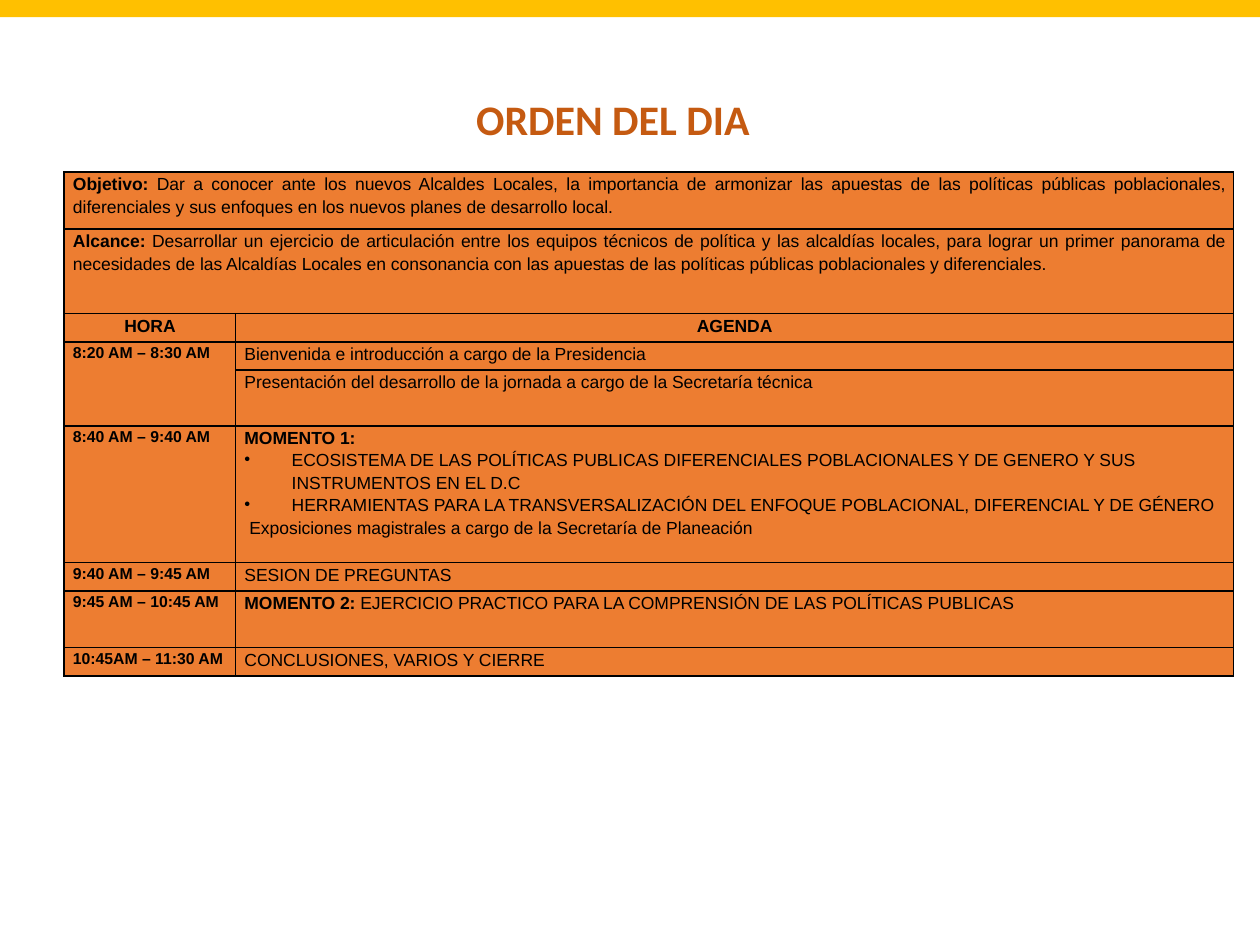
import pptx
import pptx.util
import pptx.dml.color
import pptx.enum.shapes
import pptx.enum.text
import pptx.oxml.ns
import lxml.etree

Pt = pptx.util.Pt
ALIGN = pptx.enum.text.PP_ALIGN
ANCHOR = pptx.enum.text.MSO_ANCHOR

TITLE = "ORDEN DEL DIA"
INTRO = [
    ("Objetivo: ", "Dar a conocer ante los nuevos Alcaldes Locales, la importancia de armonizar "
     "las apuestas de las políticas públicas poblacionales, diferenciales y sus enfoques en los "
     "nuevos planes de desarrollo local."),
    ("Alcance: ", "Desarrollar un ejercicio de articulación entre los equipos técnicos de política "
     "y las alcaldías locales, para lograr un primer panorama de necesidades de las Alcaldías "
     "Locales en consonancia con las apuestas de las políticas públicas poblacionales y "
     "diferenciales."),
]
HEADERS = ["HORA", "AGENDA"]
AGENDA = [
    ("8:20 AM – 8:30 AM", [("", "Bienvenida e introducción a cargo de la Presidencia")]),
    ("", [("", "Presentación del desarrollo de la jornada a cargo de la Secretaría técnica")]),
    ("8:40 AM – 9:40 AM", [
        ("MOMENTO 1:", ""),
        ("•", "ECOSISTEMA DE LAS POLÍTICAS PUBLICAS DIFERENCIALES POBLACIONALES Y DE GENERO "
         "Y SUS INSTRUMENTOS EN EL D.C"),
        ("•", "HERRAMIENTAS PARA LA TRANSVERSALIZACIÓN DEL ENFOQUE POBLACIONAL, DIFERENCIAL "
         "Y DE GÉNERO"),
        ("", " Exposiciones magistrales a cargo de la Secretaría de Planeación"),
    ]),
    ("9:40 AM – 9:45 AM", [("", "SESION DE PREGUNTAS")]),
    ("9:45 AM – 10:45 AM", [
        ("MOMENTO 2:", " EJERCICIO PRACTICO PARA LA COMPRENSIÓN DE LAS POLÍTICAS PUBLICAS")]),
    ("10:45AM – 11:30 AM", [("", "CONCLUSIONES, VARIOS Y CIERRE")]),
]
COL_WIDTHS = [98, 570.2]
ROW_HEIGHTS = [32.5, 48.3, 16.2, 16.2, 31.8, 78.2, 16.2, 32.3, 16.4]


def color(code):
    return pptx.dml.color.RGBColor.from_string(code)


def add_bullet(p, char):
    pPr = p._p.get_or_add_pPr()
    pPr.set("marL", str(Pt(27)))
    pPr.set("indent", str(-Pt(27)))
    lxml.etree.SubElement(pPr, pptx.oxml.ns.qn("a:buChar"), char=char)


def style_run(r, font, size, code, bold):
    r.font.name, r.font.size, r.font.bold = font, Pt(size), bold
    r.font.color.rgb = color(code)


def fill_cell(cell, paragraphs, align=ALIGN.LEFT, size=10):
    tf = cell.text_frame
    for i, (lead, text) in enumerate(paragraphs):
        p = tf.add_paragraph() if i else tf.paragraphs[0]
        p.alignment, p.line_spacing = align, 1.15
        if lead == "•":
            add_bullet(p, lead)
            lead = ""
        for part, bold in ((lead, True), (text, False)):
            if part:
                r = p.add_run()
                r.text = part
                style_run(r, "Arial", size, "000000", bold)


def format_cell(cell):
    cell.margin_left = cell.margin_right = Pt(5)
    cell.margin_top = cell.margin_bottom = Pt(0)
    tcPr = cell._tc.get_or_add_tcPr()
    for side in ("a:lnL", "a:lnR", "a:lnT", "a:lnB"):
        ln = lxml.etree.SubElement(tcPr, pptx.oxml.ns.qn(side), w=str(Pt(1)))
        solid = lxml.etree.SubElement(ln, pptx.oxml.ns.qn("a:solidFill"))
        lxml.etree.SubElement(solid, pptx.oxml.ns.qn("a:srgbClr"), val="000000")
    cell.fill.solid()
    cell.fill.fore_color.rgb = color("ED7D31")


def add_title(s):
    sp = s.shapes.title
    sp.left, sp.top, sp.width, sp.height = Pt(239), Pt(49.7), Pt(222.5), Pt(36)
    tf = sp.text_frame
    tf.text = TITLE
    tf.vertical_anchor = ANCHOR.TOP
    p = tf.paragraphs[0]
    p.alignment = ALIGN.CENTER
    style_run(p.runs[0], "Calibri", 24, "C55A11", True)


def add_band(s):
    sp = s.shapes.add_shape(pptx.enum.shapes.MSO_SHAPE.RECTANGLE, 0, 0, Pt(720), Pt(9.8))
    sp.shadow.inherit = False
    sp.fill.solid()
    sp.fill.fore_color.rgb = color("FFC000")
    sp.line.fill.background()


def add_agenda(s):
    frame = s.shapes.add_table(len(ROW_HEIGHTS), len(COL_WIDTHS), Pt(36.7), Pt(98.4),
                               Pt(sum(COL_WIDTHS)), Pt(sum(ROW_HEIGHTS)))
    table = frame.table
    table.first_row = table.horz_banding = False
    for col, width in zip(table.columns, COL_WIDTHS):
        col.width = Pt(width)
    for row, height in zip(table.rows, ROW_HEIGHTS):
        row.height = Pt(height)
    for cell in table.iter_cells():
        format_cell(cell)

    for i, paragraph in enumerate(INTRO):
        table.cell(i, 0).merge(table.cell(i, 1))
        fill_cell(table.cell(i, 0), [paragraph], ALIGN.JUSTIFY)
    head = len(INTRO)
    for j, label in enumerate(HEADERS):
        fill_cell(table.cell(head, j), [(label, "")], ALIGN.CENTER)
    for i, (hour, paragraphs) in enumerate(AGENDA, head + 1):
        if hour:
            fill_cell(table.cell(i, 0), [(hour, "")], size=9)
        else:
            table.cell(i - 1, 0).merge(table.cell(i, 0))
        fill_cell(table.cell(i, 1), paragraphs)


def main():
    prs = pptx.Presentation()
    prs.slide_width, prs.slide_height = Pt(720), Pt(540)
    s = prs.slides.add_slide(prs.slide_layouts[5])
    add_band(s)
    add_title(s)
    add_agenda(s)
    prs.save("out.pptx")


if __name__ == "__main__":
    main()
